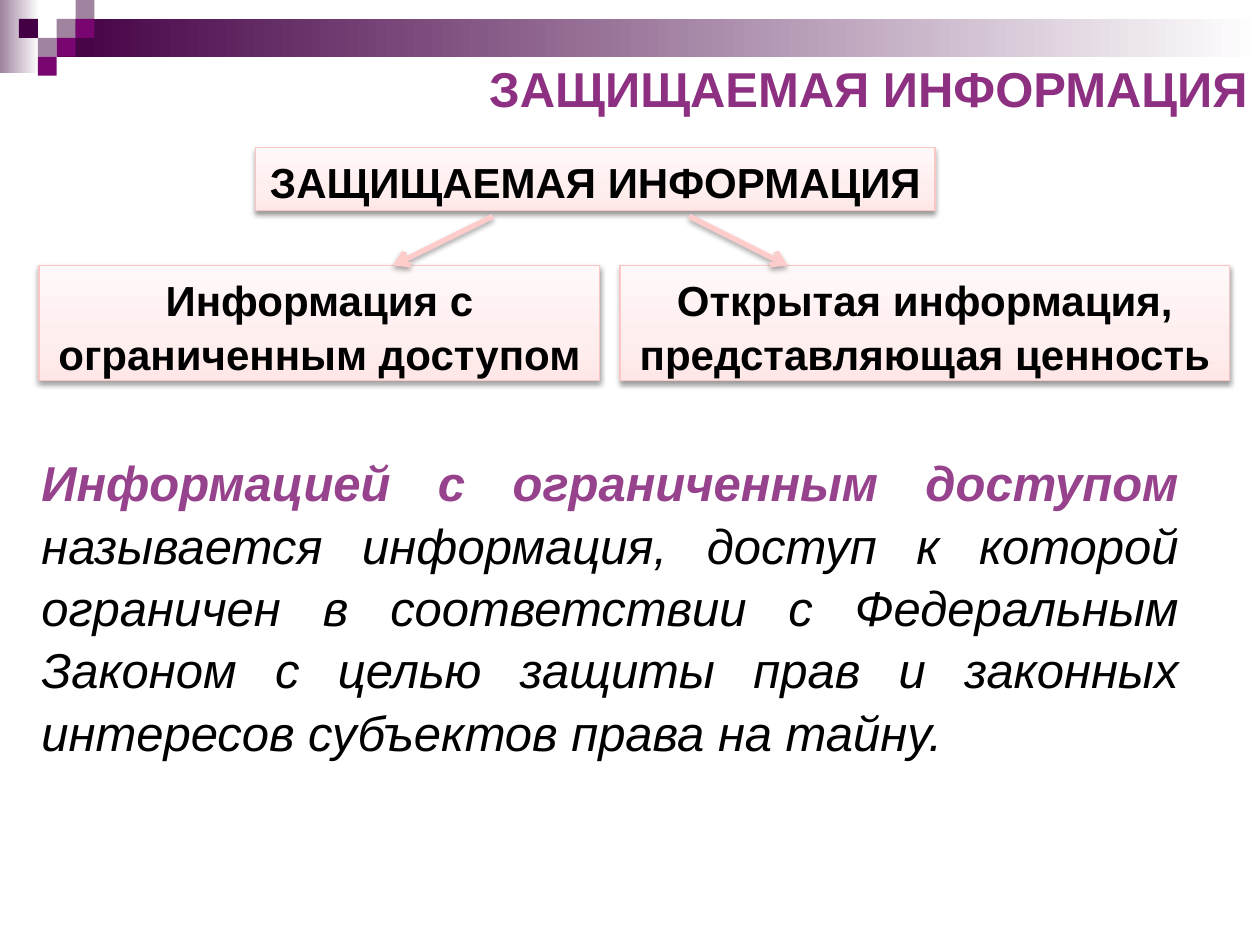
"""Build the slide on protected information and its two kinds."""
from typing import NamedTuple

from lxml.etree import SubElement
from pptx import Presentation
from pptx.dml.color import RGBColor
from pptx.enum.shapes import MSO_CONNECTOR as Connector, MSO_SHAPE as Shape
from pptx.enum.text import MSO_ANCHOR as Anchor, PP_ALIGN as Align
from pptx.oxml.ns import qn
from pptx.util import Inches, Pt

WIDTH, HEIGHT = Inches(10), Inches(7.5)
CELL_WIDTH, CELL_HEIGHT = 1.5, 2
DARK, MIDDLE, PALE = "440044", "790571", "9F839F"
HEADING, ACCENT, BLACK = "8D3082", "96428C", "000000"
BOX_LINE, ARROW = "FBC6C6", "FFCCCC"
BOX_STOPS = [(0, "FFE7E7"), (35, "FFEEEE"), (100, "FFF8F8")]


class Area(NamedTuple):
    """Left, top, width and height in percent of the slide."""
    left: float
    top: float
    width: float
    height: float

    def lengths(self):
        return (across(self.left), down(self.top), across(self.width), down(self.height))


class Square(NamedTuple):
    """One decorative square on the corner grid."""
    column: int
    row: int
    color: str


class Box(NamedTuple):
    """A labelled box of the diagram."""
    area: Area
    label: str


class Arrow(NamedTuple):
    """An arrow between two points, in percent of the slide."""
    start: tuple[float, float]
    end: tuple[float, float]


SQUARES = [
    Square(3, 1, PALE), Square(4, 0, PALE), Square(4, 1, MIDDLE), Square(2, 2, PALE),
    Square(1, 1, DARK), Square(3, 2, MIDDLE), Square(2, 3, MIDDLE),
]
BOXES = [
    Box(Area(20.3, 15.6, 53.9, 6.7), "ЗАЩИЩАЕМАЯ ИНФОРМАЦИЯ"),
    Box(Area(3.1, 28.1, 44.5, 12.2), "Информация с ограниченным доступом"),
    Box(Area(49.2, 28.1, 48.4, 12.2), "Открытая информация, представляющая ценность"),
]
ARROWS = [Arrow((39.1, 22.9), (31.2, 28.1)), Arrow((54.7, 22.9), (62.5, 28.1))]


def across(share: float) -> int:
    """Turn a percentage of the slide's width into a length."""
    return round(WIDTH * share / 100)


def down(share: float) -> int:
    """Turn a percentage of the slide's height into a length."""
    return round(HEIGHT * share / 100)


def paint(color_format, color: str) -> None:
    """Apply a hex colour to a colour format."""
    color_format.rgb = RGBColor.from_string(color)


def add_child(parent, tag: str, **attributes):
    """Append an element of the drawing namespace."""
    return SubElement(parent, qn(f"a:{tag}"), {key: str(value) for key, value in attributes.items()})


def add_gradient(shape, stops: list[tuple[int, str]], angle: int = 0) -> None:
    """Fill a shape with a linear gradient, its angle running clockwise."""
    shape.fill.gradient()
    gradient = shape.fill._xPr.find(qn("a:gradFill"))
    stop_list = gradient.find(qn("a:gsLst"))
    for stop in list(stop_list):
        stop_list.remove(stop)
    for position, color in stops:
        add_child(add_child(stop_list, "gs", pos=position * 1000), "srgbClr", val=color)
    gradient.find(qn("a:lin")).set("ang", str(angle * 60000))


def add_shadow(shape, distance: float, opacity: int) -> None:
    """Give a shape or connector a soft shadow straight below it."""
    effects = add_child(shape._element.spPr, "effectLst")
    shadow = add_child(effects, "outerShdw", blurRad=Pt(3.1), dist=Pt(distance),
                       dir=90 * 60000, rotWithShape=0)
    add_child(add_child(shadow, "srgbClr", val=BLACK), "alpha", val=opacity * 1000)


def add_rectangle(slide, area: Area):
    """Add a rectangle without line or shadow."""
    shape = slide.shapes.add_shape(Shape.RECTANGLE, *area.lengths())
    shape.line.fill.background()
    return shape


def write(shape, *pieces: tuple[str, str, bool], size: int, align: Align, italic: bool = False) -> None:
    """Write one paragraph from pieces of text, colour and boldness."""
    frame = shape.text_frame
    frame.word_wrap = True
    frame.vertical_anchor = Anchor.TOP
    paragraph = frame.paragraphs[0]
    paragraph.alignment = align
    paragraph.line_spacing = 1.06
    for text, color, bold in pieces:
        run = paragraph.add_run()
        run.text = text
        font = run.font
        font.name, font.size, font.bold, font.italic = "Arial", Pt(size), bold, italic
        paint(font.color, color)


def draw_square(slide, square: Square) -> None:
    """Draw one square of the corner ornament."""
    shape = add_rectangle(slide, Area(square.column * CELL_WIDTH, square.row * CELL_HEIGHT,
                                      CELL_WIDTH, CELL_HEIGHT))
    shape.shadow.inherit = False
    shape.fill.solid()
    paint(shape.fill.fore_color, square.color)


def draw_band(slide, area: Area, color: str) -> None:
    """Draw a band that fades to white on the right."""
    shape = add_rectangle(slide, area)
    shape.shadow.inherit = False
    add_gradient(shape, [(0, color), (100, "FFFFFF")])


def draw_box(slide, box: Box) -> None:
    """Draw a labelled box."""
    shape = add_rectangle(slide, box.area)
    add_gradient(shape, BOX_STOPS, angle=270)
    paint(shape.line.color, BOX_LINE)
    shape.line.width = Pt(0.75)
    add_shadow(shape, distance=1.6, opacity=38)
    write(shape, (box.label, BLACK, True), size=24, align=Align.CENTER)


def draw_arrow(slide, arrow: Arrow) -> None:
    """Draw an arrow between two points."""
    (start_x, start_y), (end_x, end_y) = arrow
    connector = slide.shapes.add_connector(Connector.STRAIGHT, across(start_x), down(start_y),
                                           across(end_x), down(end_y))
    paint(connector.line.color, ARROW)
    connector.line.width = Pt(3)
    add_child(connector.line._get_or_add_ln(), "tailEnd", type="arrow")
    add_shadow(connector, distance=1.8, opacity=35)


def main() -> None:
    """Build and save the presentation."""
    presentation = Presentation()
    presentation.slide_width, presentation.slide_height = WIDTH, HEIGHT
    slide = presentation.slides.add_slide(presentation.slide_layouts[5])

    draw_band(slide, Area(0, 0, 3.1, 7.7), PALE)
    draw_band(slide, Area(3 * CELL_WIDTH, CELL_HEIGHT, 100 - 3 * CELL_WIDTH, 2 * CELL_HEIGHT), DARK)
    for square in SQUARES:
        draw_square(slide, square)

    title = slide.shapes.title
    title.left, title.top, title.width, title.height = Area(5.5, 5.2, 94.5, 7.6).lengths()
    write(title, ("ЗАЩИЩАЕМАЯ ИНФОРМАЦИЯ", HEADING, True), size=28, align=Align.RIGHT)

    definition = slide.shapes.add_textbox(*Area(2.3, 46.9, 92.2, 32.8).lengths())
    write(definition,
          ("Информацией с ограниченным доступом ", ACCENT, True),
          ("называется информация, доступ к которой ограничен в соответствии с Федеральным "
           "Законом с целью защиты прав и законных интересов субъектов права на тайну.", BLACK, False),
          size=28, align=Align.JUSTIFY, italic=True)

    for box in BOXES:
        draw_box(slide, box)
    for arrow in ARROWS:
        draw_arrow(slide, arrow)
    presentation.save("out.pptx")


if __name__ == "__main__":
    main()
